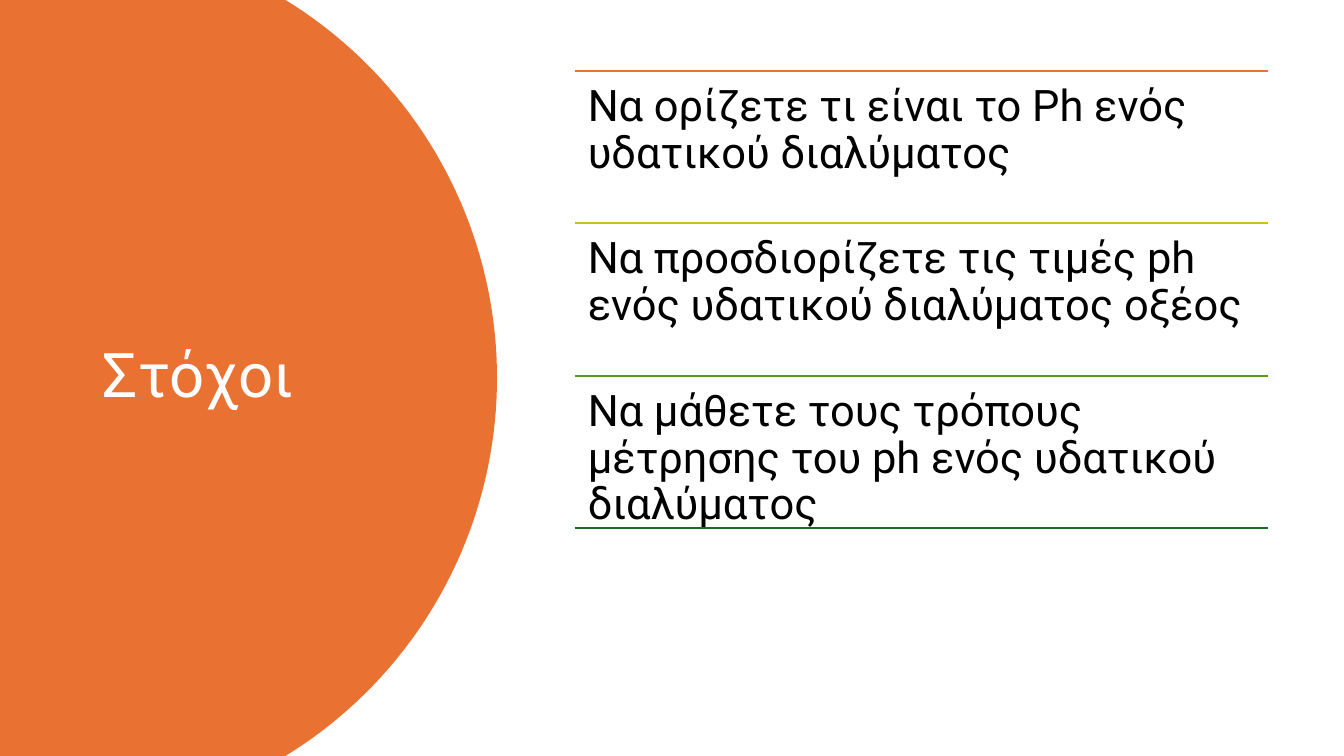
import dataclasses
import math

import pptx
import pptx.dml.color
import pptx.enum.shapes
import pptx.enum.text
import pptx.oxml
import pptx.util

Inches = pptx.util.Inches
LEFT, TOP, WIDTH, STEP = 5.7, 0.7, 6.88, 1.513
HIGH = 7.5
DISC, END = "E97132", "196B24"


@dataclasses.dataclass
class Goal:
    text: str
    color: str


GOALS = [
    Goal("Να ορίζετε τι είναι το Ph ενός υδατικού διαλύματος", "E97132"),
    Goal("Να προσδιορίζετε τις τιμές ph ενός υδατικού διαλύματος οξέος", "CBC11E"),
    Goal("Να μάθετε τους τρόπους μέτρησης του ph ενός υδατικού διαλύματος", "56991D"),
]


def paint(target, color: str) -> None:
    """Set a solid colour on a fill."""
    target.solid()
    target.fore_color.rgb = pptx.dml.color.RGBColor.from_string(color)


def write(shape, text: str, size: float, color: str, **frame) -> None:
    """Put one left-aligned paragraph in a shape, with frame settings."""
    box = shape.text_frame
    box.text = text
    values = {"word_wrap": True, "auto_size": pptx.enum.text.MSO_AUTO_SIZE.NONE, **frame}
    for name, value in values.items():
        setattr(box, name, value)
    para = box.paragraphs[0]
    para.alignment = pptx.enum.text.PP_ALIGN.LEFT
    para.line_spacing = 0.9
    font = para.runs[0].font
    for name, value in {"name": "Roboto", "size": pptx.util.Pt(size)}.items():
        setattr(font, name, value)
    paint(font.fill, color)


def draw_disc(slide) -> None:
    """Draw the part of a large disc that lies on the slide, behind the title."""
    center, radius, count = 0.53, 4.4, 80
    limit = math.asin(HIGH / 2 / radius)
    angles = [limit * (2 * i / count - 1) for i in range(count + 1)]
    arc = [
        (Inches(center + radius * math.cos(a)), Inches(HIGH / 2 + radius * math.sin(a)))
        for a in angles
    ]
    path = slide.shapes.build_freeform(0, 0)
    path.add_line_segments(arc + [(0, Inches(HIGH))], close=True)
    disc = path.convert_to_shape()
    disc.shadow.inherit = False
    paint(disc.fill, DISC)
    disc.line.fill.background()
    slide.shapes.title._element.addprevious(disc._element)


def draw_rule(slide, top: float, color: str) -> None:
    """Draw a horizontal rule across the list."""
    rule = slide.shapes.add_connector(
        pptx.enum.shapes.MSO_CONNECTOR.STRAIGHT,
        Inches(LEFT), Inches(top), Inches(LEFT + WIDTH), Inches(top),
    )
    rule.line.width = pptx.util.Pt(1.5)
    paint(rule.line.fill, color)
    props = rule._element.spPr
    props.append(pptx.oxml.parse_xml(
        '<a:effectLst xmlns:a="http://schemas.openxmlformats.org/drawingml/2006/main"/>'
    ))


def main() -> None:
    deck = pptx.Presentation()
    deck.slide_width, deck.slide_height = Inches(13.33), Inches(HIGH)
    slide = deck.slides.add_slide(deck.slide_layouts[5])

    # Title on the disc
    draw_disc(slide)
    title = slide.shapes.title
    place = {"left": 0.92, "top": 0.7, "width": 3.23, "height": 6.09}
    for name, value in place.items():
        setattr(title, name, Inches(value))
    write(title, "Στόχοι", 44, "FFFFFF",
          vertical_anchor=pptx.enum.text.MSO_ANCHOR.MIDDLE)

    # Goals, each under its own rule
    sides = ("left", "top", "right", "bottom")
    inset = {f"margin_{side}": Inches(0.13) for side in sides}
    for i, goal in enumerate(GOALS):
        top = TOP + i * STEP
        draw_rule(slide, top, goal.color)
        box = slide.shapes.add_textbox(
            Inches(LEFT), Inches(top), Inches(WIDTH), Inches(STEP))
        write(box, goal.text, 31, "000000", **inset)

    # Closing rule
    draw_rule(slide, TOP + len(GOALS) * STEP, END)
    deck.save("out.pptx")


if __name__ == "__main__":
    main()
